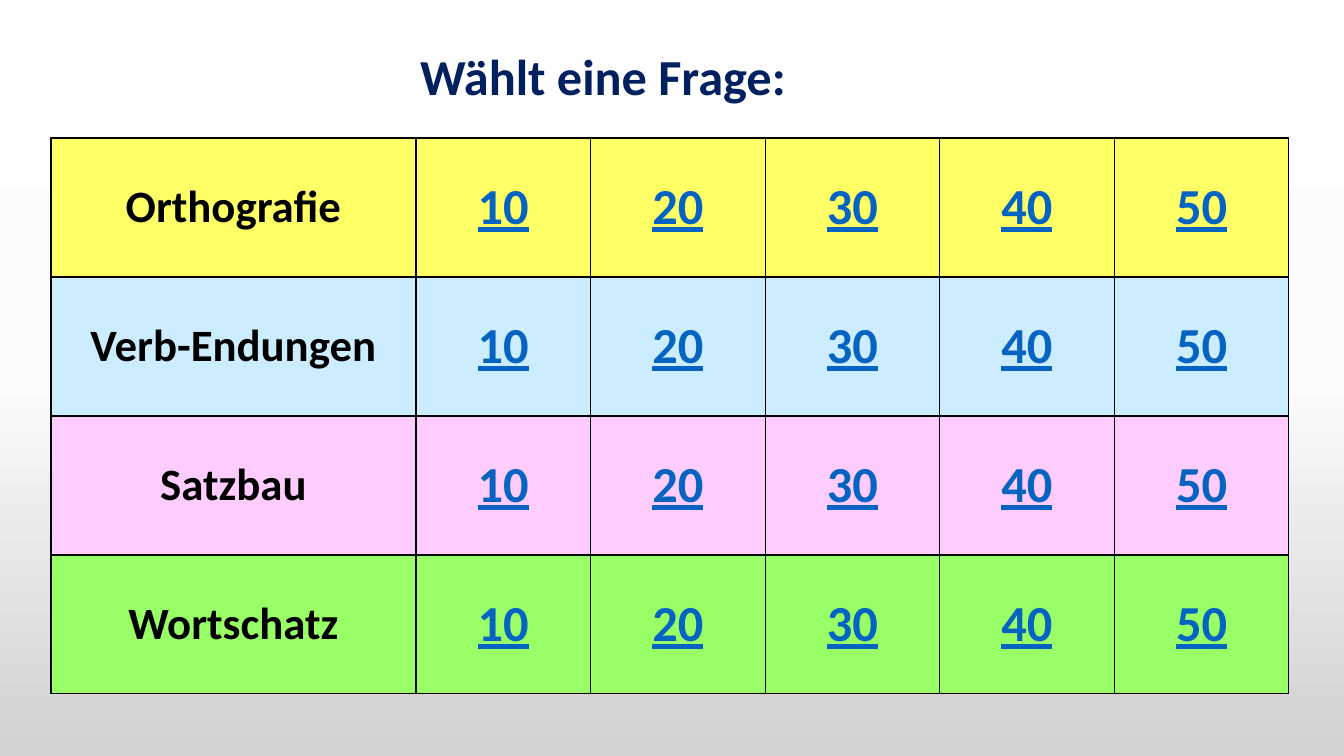
from copy import deepcopy

from lxml.etree import SubElement
from pptx import Presentation
from pptx.dml.color import RGBColor
from pptx.enum.text import MSO_ANCHOR, MSO_AUTO_SIZE, PP_ALIGN
from pptx.oxml.ns import qn
from pptx.util import Emu, Pt

THEME = {
    "font": "Calibri",
    "title": ("002060", 36),
    "topic": ("000000", 32),
    "points": ("0563C1", 36),
    "border": "000000",
    "background": [(0, "FFFFFF"), (0.5, "FBFBFB"), (1, "D1D1D1")],
}
TOPICS = [
    ("Orthografie", "FFFF66"),
    ("Verb-Endungen", "CCECFF"),
    ("Satzbau", "FFCCFF"),
    ("Wortschatz", "99FF66"),
]
POINTS = ["10", "20", "30", "40", "50"]


def px(n):
    return Emu(round(n * 914400 / 100.8))


def style(p, role, align):
    color, size = THEME[role]
    p.alignment = align
    p.font.name = THEME["font"]
    p.font.size = Pt(size)
    p.font.bold = True
    p.font.color.rgb = RGBColor.from_string(color)


prs = Presentation()
prs.slide_width, prs.slide_height = px(1344), px(756)
s = prs.slides.add_slide(prs.slide_layouts[5])

fill = s.background.fill
fill.gradient()
fill.gradient_angle = 270
stops = next(s.element.iter(qn("a:gsLst")))
stops.append(deepcopy(stops[-1]))
for stop, (position, color) in zip(fill.gradient_stops, THEME["background"]):
    stop.position = position
    stop.color.rgb = RGBColor.from_string(color)

title = s.shapes.title
title.left, title.top, title.width, title.height = px(410), px(40), px(390), px(72)
tf = title.text_frame
tf.text = "Wählt eine Frage:"
tf.word_wrap = False
tf.auto_size = MSO_AUTO_SIZE.SHAPE_TO_FIT_TEXT
tf.vertical_anchor = MSO_ANCHOR.TOP
style(tf.paragraphs[0], "title", PP_ALIGN.LEFT)

topic_width, points_width, row_height = 365, 873, 139
table = s.shapes.add_table(
    len(TOPICS), 1 + len(POINTS), px(51), px(138),
    px(topic_width + points_width), px(row_height * len(TOPICS)),
).table
table.first_row = table.horz_banding = False
table.columns[0].width = px(topic_width)
for i in range(len(POINTS)):
    table.columns[i + 1].width = px(points_width) // len(POINTS)

for row, (topic, color) in enumerate(TOPICS):
    table.rows[row].height = px(row_height)
    for col, text in enumerate([topic] + POINTS):
        cell = table.cell(row, col)
        cell.text = text
        cell.vertical_anchor = MSO_ANCHOR.MIDDLE
        p = cell.text_frame.paragraphs[0]
        style(p, "points" if col else "topic", PP_ALIGN.CENTER)
        if col:
            p.font.underline = True
        else:
            p.line_spacing = 0.9
        tcPr = cell._tc.get_or_add_tcPr()
        for side in ("a:lnL", "a:lnR", "a:lnT", "a:lnB"):
            ln = SubElement(tcPr, qn(side), w=str(Pt(1)))
            solid = SubElement(ln, qn("a:solidFill"))
            SubElement(solid, qn("a:srgbClr"), val=THEME["border"])
        cell.fill.solid()
        cell.fill.fore_color.rgb = RGBColor.from_string(color)

prs.save("out.pptx")
